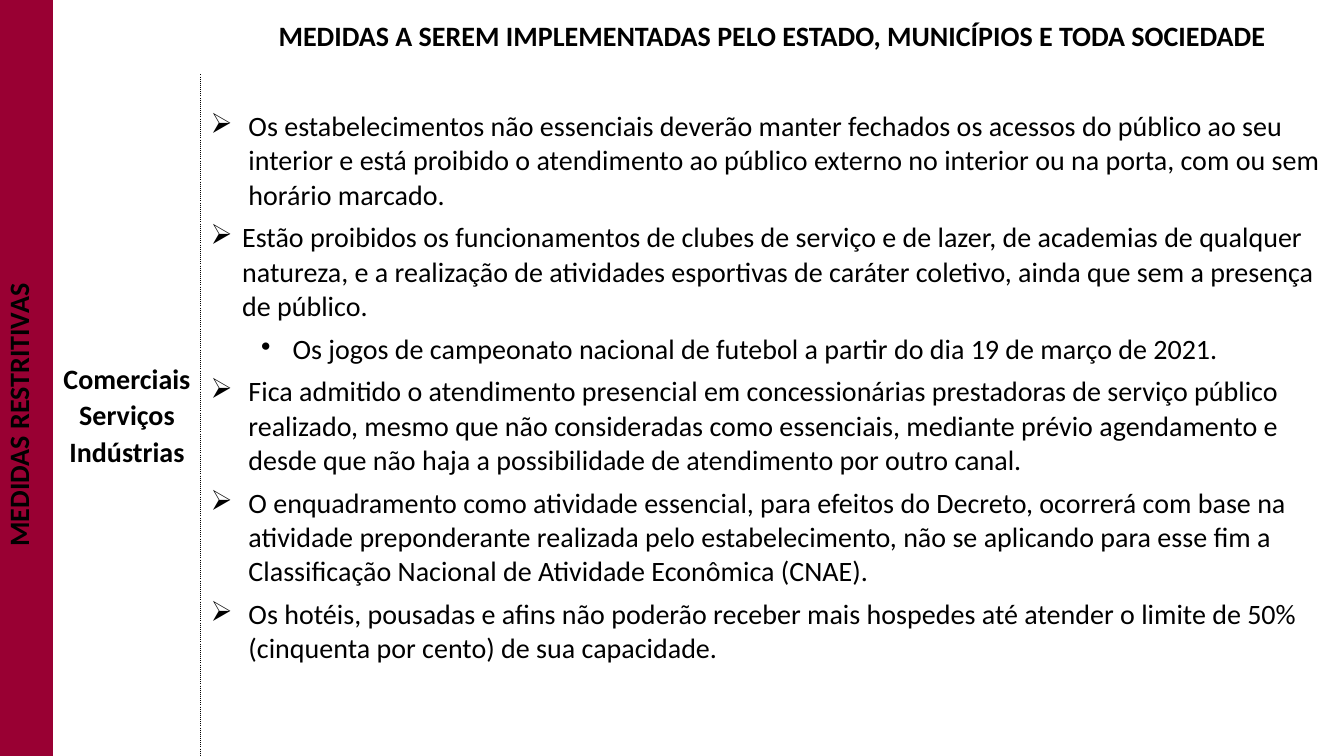
"""Build the slide on restrictive measures for commerce, services and industry."""
from dataclasses import dataclass

from lxml.etree import SubElement
from pptx import Presentation
from pptx.dml.color import RGBColor
from pptx.enum.text import MSO_VERTICAL_ANCHOR as Anchor, PP_PARAGRAPH_ALIGNMENT as Align
from pptx.oxml import parse_xml
from pptx.oxml.ns import nsdecls, qn
from pptx.table import Table, _Cell as Cell
from pptx.util import Pt

FONT = "Calibri"
TEXT_SIZE = 20
BLACK, WHITE, CRIMSON = "000000", "FFFFFF", "990033"
NO_STYLE = "{2D5ABB26-0587-4C30-8999-92F81FD0307C}"
COLUMN_WIDTHS = (38.2, 105.1, 816.7)
ROW_HEIGHTS = (55.4, 486.8)
TABLE_TOP = -2.2


@dataclass
class Heading:
    row: int
    column: int
    lines: tuple[str, ...]
    margin: float = 2.9
    vertical: bool = False


@dataclass
class Measure:
    text: str
    left: float = 27
    hanging: float = 27
    bullet: str = "➢"
    level: int = 0


HEADINGS = (
    Heading(0, 2, ("MEDIDAS A SEREM IMPLEMENTADAS PELO ESTADO, MUNICÍPIOS E TODA SOCIEDADE",), 3.6),
    Heading(1, 0, ("MEDIDAS RESTRITIVAS",), vertical=True),
    Heading(1, 1, ("Comerciais", "Serviços", "Indústrias")),
)
MEASURES = (
    Measure("Os estabelecimentos não essenciais deverão manter fechados os acessos do público ao seu "
            "interior e está proibido o atendimento ao público externo no interior ou na porta, "
            "com ou sem horário marcado."),
    Measure("Estão proibidos os funcionamentos de clubes de serviço e de lazer, de academias de "
            "qualquer natureza, e a realização de atividades esportivas de caráter coletivo, "
            "ainda que sem a presença de público.", 22.5, 22.5),
    Measure("Os jogos de campeonato nacional de futebol a partir do dia 19 de março de 2021.",
            58.5, 22.5, "•", 1),
    Measure("Fica admitido o atendimento presencial em concessionárias prestadoras de serviço "
            "público realizado, mesmo que não consideradas como essenciais, mediante prévio "
            "agendamento e desde que não haja a possibilidade de atendimento por outro canal."),
    Measure("O enquadramento como atividade essencial, para efeitos do Decreto, ocorrerá com base "
            "na atividade preponderante realizada pelo estabelecimento, não se aplicando para "
            "esse fim a Classificação Nacional de Atividade Econômica (CNAE)."),
    Measure("Os hotéis, pousadas e afins não poderão receber mais hospedes até atender o limite "
            "de 50% (cinquenta por cento) de sua capacidade."),
)


def color(value: str) -> RGBColor:
    return RGBColor.from_string(value)


def fill_cell(cell: Cell, value: str) -> None:
    cell.fill.solid()
    cell.fill.fore_color.rgb = color(value)


def set_margins(cell: Cell, side: float, top: float = 0) -> None:
    cell.margin_left = cell.margin_right = Pt(side)
    cell.margin_top, cell.margin_bottom = Pt(top), Pt(0)


def write_lines(cell: Cell, lines: list[str], bold: bool) -> None:
    cell.text_frame.text = "\n".join(lines)
    for paragraph in cell.text_frame.paragraphs:
        for run in paragraph.runs:
            run.font.name = FONT
            run.font.size = Pt(TEXT_SIZE)
            run.font.bold = bold
            run.font.color.rgb = color(BLACK)


def add_dotted_border(cell: Cell, side: str) -> None:
    border = parse_xml(
        f'<a:{side} {nsdecls("a")} w="{Pt(0.25)}"><a:solidFill><a:srgbClr val="{BLACK}"/>'
        f'</a:solidFill><a:prstDash val="sysDot"/></a:{side}>')
    cell._tc.get_or_add_tcPr().insert(0, border)


def write_heading(table: Table, heading: Heading) -> None:
    cell = table.cell(heading.row, heading.column)
    set_margins(cell, heading.margin)
    cell.vertical_anchor = Anchor.MIDDLE
    write_lines(cell, list(heading.lines), True)
    for paragraph in cell.text_frame.paragraphs:
        paragraph.alignment = Align.CENTER
        paragraph.line_spacing = 1.07
    if heading.vertical:
        cell._tc.get_or_add_tcPr().set("vert", "vert270")


def write_measures(cell: Cell, measures: tuple[Measure, ...]) -> None:
    set_margins(cell, 7.2, 25.3)
    write_lines(cell, [measure.text for measure in measures], False)
    for paragraph, measure in zip(cell.text_frame.paragraphs, measures):
        paragraph.level = measure.level
        paragraph.space_after = Pt(6)
        properties = paragraph._p.get_or_add_pPr()
        properties.set("marL", str(Pt(measure.left)))
        properties.set("indent", str(-Pt(measure.hanging)))
        SubElement(properties, qn("a:buChar")).set("char", measure.bullet)


def main() -> None:
    presentation = Presentation()
    presentation.slide_width, presentation.slide_height = Pt(960), Pt(540)
    slide = presentation.slides.add_slide(presentation.slide_layouts[6])
    table = slide.shapes.add_table(
        len(ROW_HEIGHTS), len(COLUMN_WIDTHS), Pt(0), Pt(TABLE_TOP),
        Pt(sum(COLUMN_WIDTHS)), Pt(sum(ROW_HEIGHTS))).table
    table.first_row = table.horz_banding = False
    table._tbl.tblPr.find(qn("a:tableStyleId")).text = NO_STYLE
    for column, width in zip(table.columns, COLUMN_WIDTHS):
        column.width = Pt(width)
    for row, height in zip(table.rows, ROW_HEIGHTS):
        row.height = Pt(height)
        for cell, value in zip(row.cells, (CRIMSON, WHITE, WHITE)):
            fill_cell(cell, value)
    for heading in HEADINGS:
        write_heading(table, heading)
    write_measures(table.cell(1, 2), MEASURES)
    add_dotted_border(table.cell(1, 1), "lnR")
    add_dotted_border(table.cell(1, 2), "lnL")
    presentation.save("out.pptx")


if __name__ == "__main__":
    main()
